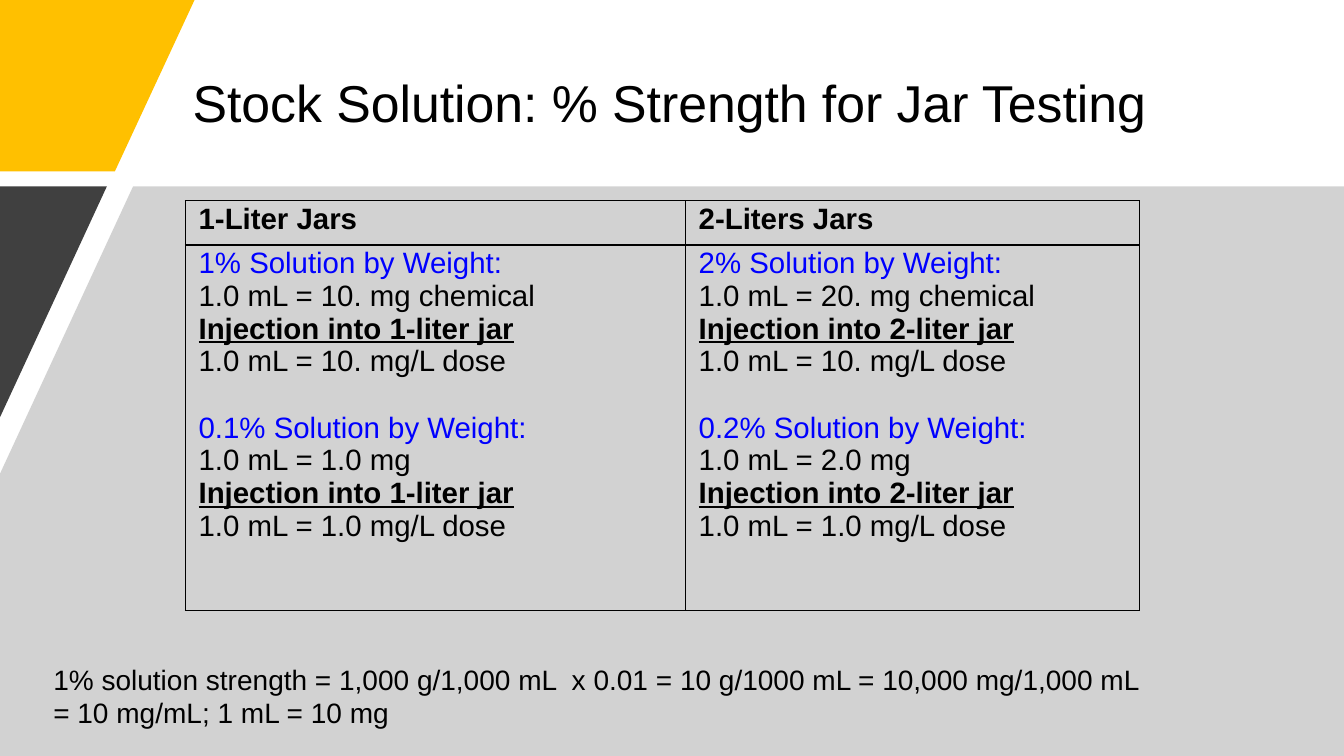
"""Build the slide on stock solution strength for jar testing."""
from dataclasses import dataclass

import pptx
import pptx.dml.color
import pptx.enum.text
import pptx.oxml
import pptx.oxml.ns
import pptx.util
from pptx.util import Inches

COLORS = {
    "text": "000000",
    "solution": "0000FF",
    "gold": "FFC000",
    "dark": "404040",
    "panel": "A6A6A6",
}
FONT = "Arial"
DRAWING_NS = pptx.oxml.ns.nsdecls("a")


@dataclass(frozen=True)
class Band:
    points: tuple[tuple[float, float], ...]
    color: str
    opacity: int = 100


@dataclass(frozen=True)
class Solution:
    strength: str
    content: str
    dose: str


@dataclass(frozen=True)
class JarColumn:
    heading: str
    jar: str
    width: float
    solutions: tuple[Solution, ...]


BANDS = (
    Band(((0, 0), (1.93, 0), (1.14, 1.7), (0, 1.7)), "gold"),
    Band(((1.32, 1.85), (13.33, 1.85), (13.33, 7.5), (0, 7.5), (0, 4.7)), "panel", 50),
    Band(((0, 1.85), (1.06, 1.85), (0, 4.14)), "dark"),
)
JAR_COLUMNS = (
    JarColumn("1-Liter Jars", "1-liter", 4.96, (
        Solution("1%", "10. mg chemical", "10."),
        Solution("0.1%", "1.0 mg", "1.0"),
    )),
    JarColumn("2-Liters Jars", "2-liter", 4.5, (
        Solution("2%", "20. mg chemical", "10."),
        Solution("0.2%", "2.0 mg", "1.0"),
    )),
)
ROW_HEIGHTS = (0.44, 3.63)
FORMULA = (
    "1% solution strength = 1,000 g/1,000 mL  x 0.01 = 10 g/1000 mL = 10,000 mg/1,000 mL",
    "= 10 mg/mL; 1 mL = 10 mg",
)


def rgb(name: str) -> pptx.dml.color.RGBColor:
    """Return the named colour."""
    return pptx.dml.color.RGBColor.from_string(COLORS[name])


def write(paragraph, text: str, size: float, color: str = "text",
          bold: bool = False, underline: bool = False) -> None:
    """Fill a paragraph with text in one font."""
    paragraph.text = text
    paragraph.alignment = pptx.enum.text.PP_ALIGN.LEFT
    font = paragraph.font
    font.name, font.size = FONT, pptx.util.Pt(size)
    font.bold, font.underline = bold, underline
    font.color.rgb = rgb(color)


def next_paragraph(frame):
    """Return the empty first paragraph, or a new one."""
    first = frame.paragraphs[0]
    return frame.add_paragraph() if first.text else first


def draw_band(slide, band: Band) -> None:
    """Draw a filled outline without a border."""
    start, *rest = [(Inches(x), Inches(y)) for x, y in band.points]
    builder = slide.shapes.build_freeform(*start)
    builder.add_line_segments(rest, close=True)
    shape = builder.convert_to_shape()
    shape.shadow.inherit = False
    shape.fill.solid()
    shape.fill.fore_color.rgb = rgb(band.color)
    shape.line.fill.background()
    if band.opacity < 100:
        tint = shape.fill._xPr.find(".//" + pptx.oxml.ns.qn("a:srgbClr"))
        tint.append(pptx.oxml.parse_xml(
            f'<a:alpha {DRAWING_NS} val="{band.opacity * 1000}"/>'))


def format_cell(cell) -> None:
    """Give a cell its margins, thin black borders and no fill."""
    cell.margin_left = cell.margin_right = Inches(0.13)
    cell.margin_top, cell.margin_bottom = Inches(0.02), 0
    for side in ("lnL", "lnR", "lnT", "lnB"):
        cell._tc.get_or_add_tcPr().append(pptx.oxml.parse_xml(
            f'<a:{side} {DRAWING_NS} w="12700"><a:solidFill>'
            f'<a:srgbClr val="{COLORS["text"]}"/></a:solidFill></a:{side}>'))
    cell.fill.background()


def write_solutions(frame, column: JarColumn) -> None:
    """List each solution with its content, injection and dose."""
    for index, solution in enumerate(column.solutions):
        strength = next_paragraph(frame)
        write(strength, f"{solution.strength} Solution by Weight:", 21, "solution")
        if index:
            strength.space_before = pptx.util.Pt(24)
        write(frame.add_paragraph(), f"1.0 mL = {solution.content}", 21)
        write(frame.add_paragraph(), f"Injection into {column.jar} jar", 21,
              bold=True, underline=True)
        write(frame.add_paragraph(), f"1.0 mL = {solution.dose} mg/L dose", 21)


def draw_jar_table(slide) -> None:
    """Draw the table that compares the two jar sizes."""
    width = sum(column.width for column in JAR_COLUMNS)
    jars = slide.shapes.add_table(
        len(ROW_HEIGHTS), len(JAR_COLUMNS), Inches(1.84), Inches(1.99),
        Inches(width), Inches(sum(ROW_HEIGHTS))).table
    jars.first_row = jars.horz_banding = False
    for row, height in zip(jars.rows, ROW_HEIGHTS):
        row.height = Inches(height)
    for index, column in enumerate(JAR_COLUMNS):
        jars.columns[index].width = Inches(column.width)
        heading, body = jars.cell(0, index), jars.cell(1, index)
        format_cell(heading)
        format_cell(body)
        write(heading.text_frame.paragraphs[0], column.heading, 21, bold=True)
        write_solutions(body.text_frame, column)


def draw_title(slide) -> None:
    """Place and format the title."""
    title = slide.shapes.title
    title.left, title.top = Inches(1.81), Inches(0.4)
    title.width, title.height = Inches(10.24), Inches(1.3)
    frame = title.text_frame
    frame.auto_size = pptx.enum.text.MSO_AUTO_SIZE.NONE
    frame.vertical_anchor = pptx.enum.text.MSO_ANCHOR.MIDDLE
    write(frame.paragraphs[0], "Stock Solution: % Strength for Jar Testing", 37)
    frame.paragraphs[0].line_spacing = 0.9


def draw_formula(slide) -> None:
    """Write the strength calculation under the table."""
    frame = slide.shapes.add_textbox(
        Inches(0.43), Inches(6.52), Inches(11.68), Inches(0.77)).text_frame
    frame.word_wrap = True
    frame.auto_size = pptx.enum.text.MSO_AUTO_SIZE.SHAPE_TO_FIT_TEXT
    for line in FORMULA:
        write(next_paragraph(frame), line, 20)


def main() -> None:
    """Build and save the slide."""
    deck = pptx.Presentation()
    deck.slide_width, deck.slide_height = Inches(13.33), Inches(7.5)
    slide = deck.slides.add_slide(deck.slide_layouts[5])
    draw_title(slide)
    for band in BANDS:
        draw_band(slide, band)
    draw_jar_table(slide)
    draw_formula(slide)
    deck.save("out.pptx")


if __name__ == "__main__":
    main()
